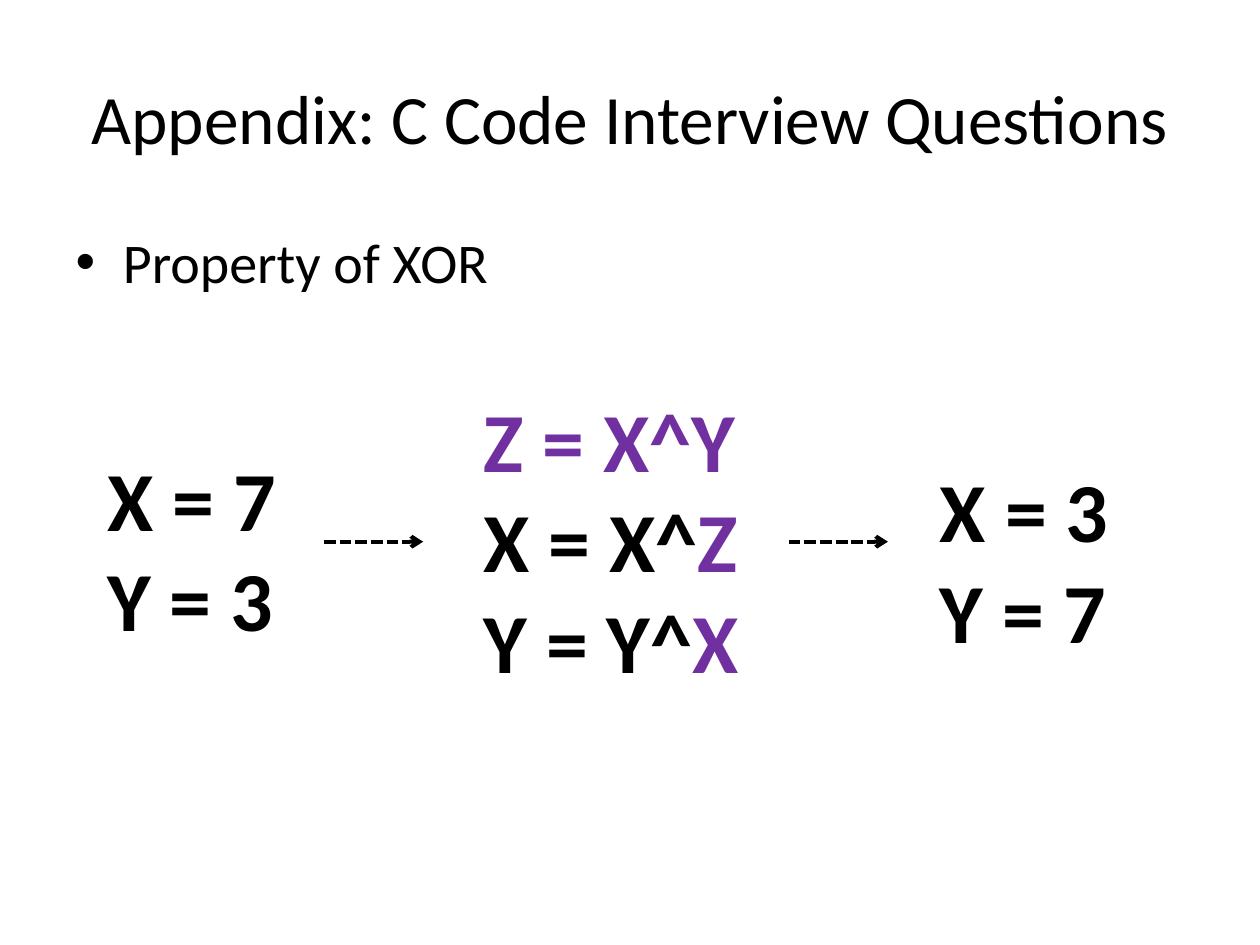
import pptx
import pptx.dml.color
import pptx.enum.dml
import pptx.enum.shapes
import pptx.enum.text
import pptx.oxml
import pptx.oxml.ns
import pptx.util
from pptx.util import Cm

BLACK = "000000"
PURPLE = "7030A0"


def color(value):
    return pptx.dml.color.RGBColor.from_string(value)


class SlideBuilder:
    font = "Calibri"
    code_size = 48
    line_width = 2.25

    def __init__(self, deck):
        self.page = deck.slides.add_slide(deck.slide_layouts[1])

    def format_span(self, span, size, shade=BLACK, bold=False):
        span.font.name = self.font
        span.font.size = pptx.util.Pt(size)
        span.font.bold = bold
        span.font.color.rgb = color(shade)

    def placeholder(self, index, text, size, left, top, width, height):
        box = self.page.placeholders[index]
        box.left, box.top, box.width, box.height = map(Cm, (left, top, width, height))
        frame = box.text_frame
        frame.text = text
        frame.auto_size = pptx.enum.text.MSO_AUTO_SIZE.NONE
        self.format_span(frame.paragraphs[0].runs[0], size)

    def code(self, lines, left, top, width, height):
        box = self.page.shapes.add_textbox(Cm(left), Cm(top), Cm(width), Cm(height))
        frame = box.text_frame
        frame.word_wrap = True
        frame.auto_size = pptx.enum.text.MSO_AUTO_SIZE.SHAPE_TO_FIT_TEXT
        for number, parts in enumerate(lines):
            para = frame.add_paragraph() if number else frame.paragraphs[0]
            for text, shade in parts:
                span = para.add_run()
                span.text = text
                self.format_span(span, self.code_size, shade, bold=True)

    def arrow(self, left, top, length):
        arrow = self.page.shapes.add_connector(
            pptx.enum.shapes.MSO_CONNECTOR.STRAIGHT,
            Cm(left), Cm(top), Cm(left + length), Cm(top))
        arrow.line.color.rgb = color(BLACK)
        arrow.line.width = pptx.util.Pt(self.line_width)
        arrow.line.dash_style = pptx.enum.dml.MSO_LINE.SQUARE_DOT
        namespace = pptx.oxml.ns.nsdecls("a")
        arrow.line._get_or_add_ln().append(
            pptx.oxml.parse_xml(f'<a:tailEnd {namespace} type="arrow"/>'))
        arrow._element.spPr.append(pptx.oxml.parse_xml(f"<a:effectLst {namespace}/>"))


def main():
    deck = pptx.Presentation()
    deck.slide_width, deck.slide_height = Cm(25.4), Cm(19.05)
    slide = SlideBuilder(deck)
    slide.placeholder(0, "Appendix: C Code Interview Questions", 39.6, 1.27, 0.76, 22.86, 3.18)
    slide.placeholder(1, "Property of XOR", 32, 1.27, 4.45, 22.86, 12.57)

    before = [[("X = 7", BLACK)], [("Y = 3", BLACK)]]
    swap = [
        [("Z = X^Y", PURPLE)],
        [("X = X^", BLACK), ("Z", PURPLE)],
        [("Y = Y^", BLACK), ("X", PURPLE)],
    ]
    after = [[("X = 3", BLACK)], [("Y = 7", BLACK)]]
    slide.code(before, 1.91, 8.89, 3.99, 4.37)
    slide.code(swap, 9.5, 7.7, 6.2, 6.4)
    slide.code(after, 18.7, 9.12, 3.99, 4.37)
    for left in (6.53, 15.9):
        slide.arrow(left, 10.92, 2)

    deck.save("out.pptx")


if __name__ == "__main__":
    main()
